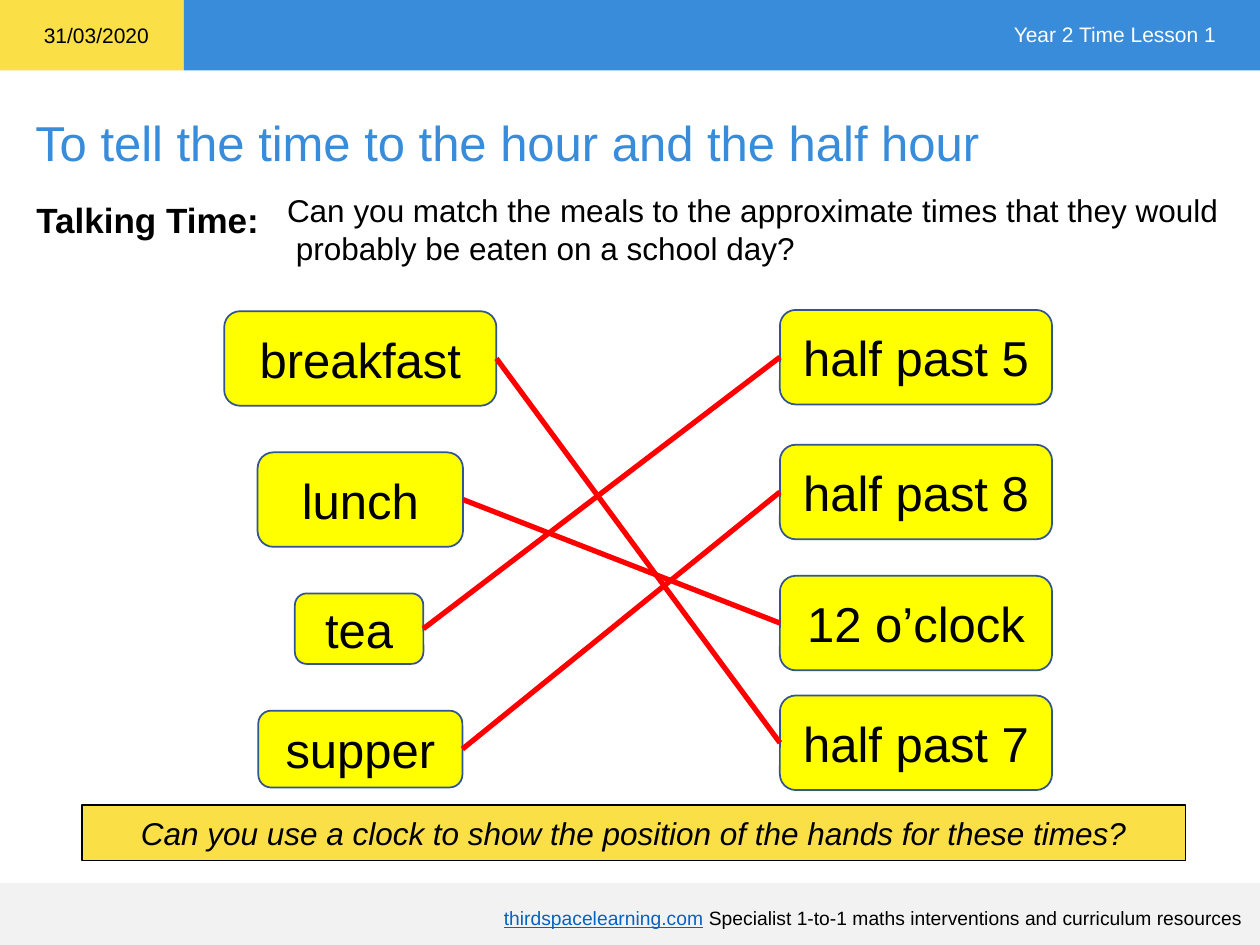
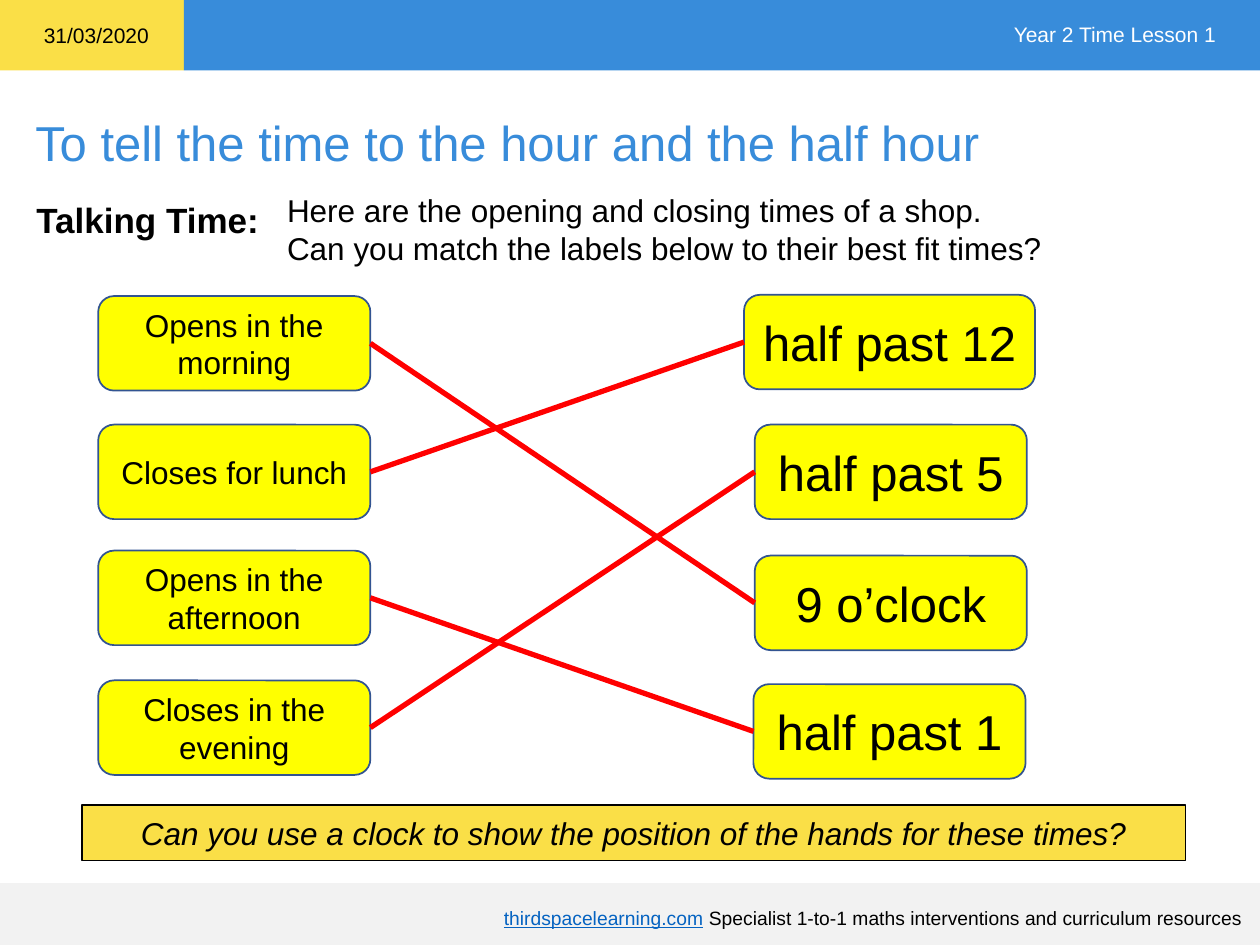
from pptx import Presentation
from pptx.dml.color import RGBColor
from pptx.enum.shapes import MSO_CONNECTOR as Connector, MSO_SHAPE as Preset
from pptx.enum.text import MSO_ANCHOR as Anchor, MSO_AUTO_SIZE as AutoSize, PP_ALIGN as Align
from pptx.oxml.ns import qn
from pptx.util import Inches, Pt
from lxml import etree

BLACK = RGBColor(0x00, 0x00, 0x00)
WHITE = RGBColor(0xFF, 0xFF, 0xFF)
BLUE = RGBColor(0x38, 0x8C, 0xDA)
GOLD = RGBColor(0xFA, 0xDF, 0x47)
PALE_GREY = RGBColor(0xF2, 0xF2, 0xF2)
LINK_BLUE = RGBColor(0x05, 0x63, 0xC1)
CARD_YELLOW = RGBColor(0xFF, 0xFF, 0x00)
CARD_OUTLINE = RGBColor(0x32, 0x54, 0x91)
MATCH_RED = RGBColor(0xFF, 0x00, 0x00)
FONT = "Arial"

TITLE = "To tell the time to the hour and the half hour"
DATE = "31/03/2020"
LESSON = "Year 2 Time Lesson 1"
WEBSITE = "thirdspacelearning.com"
STRAPLINE = " Specialist 1-to-1 maths interventions and curriculum resources"
CHALLENGE = "Can you use a clock to show the position of the hands for these times?"
BANDS = [
    ((0, 0, 1.46, 0.56), GOLD),
    ((1.46, 0, 8.54, 0.56), BLUE),
    ((0, 7.01, 10, 0.49), PALE_GREY),
]
CARD_WIDTH, CARD_HEIGHT = 2.16, 0.75
RIGHT_SIDE, LEFT_SIDE = 3, 1

# Each card: text, centre x, top, width, height
SLIDES = [
    {
        "question": [
            ("Can you match the meals to the approximate times that they would", 0),
            ("probably be eaten on a school day?", 0.07),
        ],
        "label_size": 28,
        "labels": [
            ("breakfast", 2.86, 2.47, CARD_WIDTH, CARD_HEIGHT),
            ("lunch", 2.86, 3.59, 1.63, CARD_HEIGHT),
            ("tea", 2.85, 4.71, 1.02, 0.56),
            ("supper", 2.86, 5.64, 1.62, 0.61),
        ],
        "times": [
            ("half past 5", 7.27, 2.46, CARD_WIDTH, CARD_HEIGHT),
            ("half past 8", 7.27, 3.53, CARD_WIDTH, CARD_HEIGHT),
            ("12 o’clock", 7.27, 4.57, CARD_WIDTH, CARD_HEIGHT),
            ("half past 7", 7.27, 5.52, CARD_WIDTH, CARD_HEIGHT),
        ],
        "matches": {
            "breakfast": "half past 7",
            "lunch": "12 o’clock",
            "tea": "half past 5",
            "supper": "half past 8",
        },
    },
    {
        "question": [
            ("Here are the opening and closing times of a shop.", 0),
            ("Can you match the labels below to their best fit times?", 0),
        ],
        "label_size": 18,
        "labels": [
            ("Opens in the morning", 1.86, 2.35, CARD_WIDTH, CARD_HEIGHT),
            ("Closes for lunch", 1.86, 3.37, CARD_WIDTH, CARD_HEIGHT),
            ("Opens in the afternoon", 1.86, 4.37, CARD_WIDTH, CARD_HEIGHT),
            ("Closes in the evening", 1.86, 5.4, CARD_WIDTH, CARD_HEIGHT),
        ],
        "times": [
            ("half past 12", 7.06, 2.34, 2.31, CARD_HEIGHT),
            ("half past 5", 7.07, 3.37, CARD_WIDTH, CARD_HEIGHT),
            ("9 o’clock", 7.07, 4.41, CARD_WIDTH, CARD_HEIGHT),
            ("half past 1", 7.06, 5.43, CARD_WIDTH, CARD_HEIGHT),
        ],
        "matches": {
            "Opens in the morning": "9 o’clock",
            "Closes for lunch": "half past 12",
            "Opens in the afternoon": "half past 1",
            "Closes in the evening": "half past 5",
        },
    },
]


def add_run(paragraph, text, size, color=BLACK, bold=False, italic=False, underline=False):
    """Add one formatted run to a paragraph."""
    run = paragraph.add_run()
    run.text = text
    font = run.font
    font.name, font.size, font.color.rgb = FONT, Pt(size), color
    font.bold, font.italic, font.underline = bold, italic, underline


def add_text_box(slide, box, align=Align.LEFT, wrap=True):
    """Add an empty text box and return its text frame."""
    frame = slide.shapes.add_textbox(*map(Inches, box)).text_frame
    frame.word_wrap = wrap
    frame.paragraphs[0].alignment = align
    return frame


def add_panel(slide, preset, box, fill, outline=None):
    """Add a filled shape with an optional thin outline."""
    shape = slide.shapes.add_shape(preset, *map(Inches, box))
    shape.shadow.inherit = False
    shape.fill.solid()
    shape.fill.fore_color.rgb = fill
    if outline is None:
        shape.line.fill.background()
    else:
        shape.line.color.rgb = outline
        shape.line.width = Pt(1)
    return shape


def add_panel_text(shape, text, size, italic=False):
    """Centre one line of text in a shape."""
    frame = shape.text_frame
    frame.word_wrap = True
    frame.vertical_anchor = Anchor.MIDDLE
    frame.paragraphs[0].alignment = Align.CENTER
    add_run(frame.paragraphs[0], text, size, italic=italic)


def add_frame(slide):
    """Add the bands, title, header and footer shared by the slides."""
    for box, fill in BANDS:
        add_panel(slide, Preset.RECTANGLE, box, fill)
    title = slide.shapes.title
    title.left, title.top, title.width, title.height = map(Inches, (0.18, 0.84, 9.77, 0.57))
    frame = title.text_frame
    frame.auto_size = AutoSize.NONE
    frame.vertical_anchor = Anchor.TOP
    frame.paragraphs[0].alignment = Align.LEFT
    add_run(frame.paragraphs[0], TITLE, 28, BLUE)

    date = add_text_box(slide, (0.25, 0.13, 1.04, 0.3), wrap=False)
    add_run(date.paragraphs[0], DATE, 12)
    lesson = add_text_box(slide, (7.93, 0.12, 1.82, 0.3), Align.RIGHT, wrap=False)
    add_run(lesson.paragraphs[0], LESSON, 12, WHITE)
    footer = add_text_box(slide, (0.42, 7.14, 9.54, 0.28), Align.RIGHT)
    add_run(footer.paragraphs[0], WEBSITE, 11, LINK_BLUE, underline=True)
    add_run(footer.paragraphs[0], STRAPLINE, 11)


def add_question(slide, lines):
    """Add the talking prompt, its question and the challenge bar."""
    prompt = add_text_box(slide, (0.19, 1.5, 1.98, 0.44), wrap=False).paragraphs[0]
    prompt.line_spacing = 1.07
    add_run(prompt, "Talking Time:", 20, bold=True)
    frame = add_text_box(slide, (2.18, 1.47, 7.63, 0.71))
    for index, (text, indent) in enumerate(lines):
        paragraph = frame.add_paragraph() if index else frame.paragraphs[0]
        if indent:
            paragraph._p.get_or_add_pPr().set("marL", str(Inches(indent)))
        add_run(paragraph, text, 18)
    bar = add_panel(slide, Preset.RECTANGLE, (0.65, 6.39, 8.76, 0.44), GOLD, BLACK)
    add_panel_text(bar, CHALLENGE, 18, italic=True)


def add_cards(slide, cards, size):
    """Add a column of cards and return them by their text."""
    shapes = {}
    for text, centre, top, width, height in cards:
        box = (centre - width / 2, top, width, height)
        shapes[text] = add_panel(slide, Preset.ROUNDED_RECTANGLE, box, CARD_YELLOW, CARD_OUTLINE)
        add_panel_text(shapes[text], text, size)
    return shapes


def add_match(slide, label, time):
    """Join a label card to its time card."""
    connector = slide.shapes.add_connector(Connector.STRAIGHT, 0, 0, 0, 0)
    connector.begin_connect(label, RIGHT_SIDE)
    connector.end_connect(time, LEFT_SIDE)
    connector.line.color.rgb = MATCH_RED
    connector.line.width = Pt(3)
    etree.SubElement(connector._element.spPr, qn("a:effectLst"))


def main():
    """Build the matching slides."""
    presentation = Presentation()
    presentation.slide_width, presentation.slide_height = Inches(10), Inches(7.5)
    for content in SLIDES:
        slide = presentation.slides.add_slide(presentation.slide_layouts[5])
        add_frame(slide)
        add_question(slide, content["question"])
        labels = add_cards(slide, content["labels"], content["label_size"])
        times = add_cards(slide, content["times"], 28)
        for label, time in content["matches"].items():
            add_match(slide, labels[label], times[time])
    presentation.save("out.pptx")


if __name__ == "__main__":
    main()
